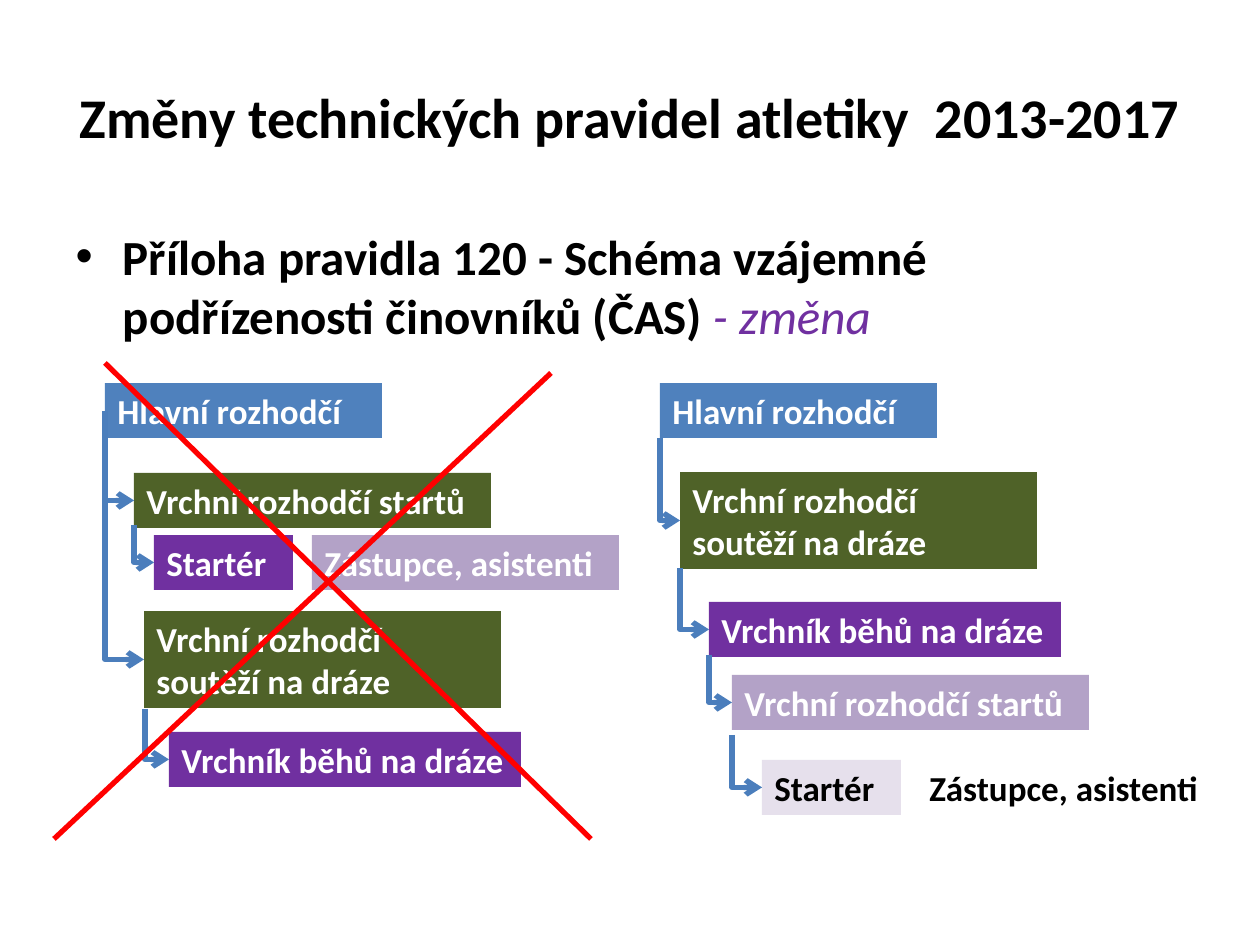
from lxml import etree
from pptx import Presentation
from pptx.dml.color import RGBColor
from pptx.enum.shapes import MSO_CONNECTOR
from pptx.enum.text import MSO_ANCHOR, MSO_AUTO_SIZE, PP_ALIGN
from pptx.oxml.ns import qn
from pptx.util import Emu, Pt

PX = 914400 // 126
STRAIGHT, ELBOW = MSO_CONNECTOR.STRAIGHT, MSO_CONNECTOR.ELBOW
MIDDLE, CENTER = MSO_ANCHOR.MIDDLE, PP_ALIGN.CENTER
GROW = MSO_AUTO_SIZE.SHAPE_TO_FIT_TEXT

BLUE, GREEN, PURPLE = "4F81BD", "4F6228", "7030A0"
LILAC, PALE, RED = "B3A2C7", "E6E0EC", "FF0000"
ARROW, WHITE, BLACK = "4B7EBC", "FFFFFF", "000000"
LOW, HIGH = 55, 97  # heights of one-line and two-line boxes

CHIEF = "Hlavní rozhodčí"
STARTS = "Vrchní rozhodčí startů"
TRACK = "Vrchní rozhodčí soutěží na dráze"
RUNS = "Vrchník běhů na dráze"
STARTER = "Startér"
HELPERS = "Zástupce, asistenti"


def px(n):
    return Emu(round(n * PX))


def rgb(code):
    return RGBColor.from_string(code)


class Board:
    def __init__(self, slide):
        self.slide = slide
        self.face = "Calibri"

    def style(self, run, size, color, bold=True, italic=False):
        font = run.font
        font.name, font.size = self.face, Pt(size)
        font.bold, font.italic = bold, italic
        font.color.rgb = rgb(color)

    def place(self, shape, x, y, w, h):
        shape.left, shape.top = px(x), px(y)
        shape.width, shape.height = px(w), px(h)

    def title(self, text, x, y, w, h):
        shape = self.slide.shapes.title
        self.place(shape, x, y, w, h)
        frame = shape.text_frame
        frame.text = text
        frame.vertical_anchor = MIDDLE
        frame.paragraphs[0].alignment = CENTER
        self.style(frame.paragraphs[0].runs[0], 32, BLACK)

    def body(self, text, note, x, y, w, h):
        shape = self.slide.placeholders[1]
        self.place(shape, x, y, w, h)
        para = shape.text_frame.paragraphs[0]
        para.text = text
        self.style(para.runs[0], 28, BLACK)
        run = para.add_run()
        run.text = note
        self.style(run, 28, PURPLE, bold=False, italic=True)

    def box(self, text, x, y, w, h=LOW, fill=None, color=WHITE):
        shape = self.slide.shapes.add_textbox(px(x), px(y), px(w), px(h))
        if fill:
            shape.fill.solid()
            shape.fill.fore_color.rgb = rgb(fill)
        frame = shape.text_frame
        frame.word_wrap = True
        frame.auto_size = GROW
        frame.text = text
        self.style(frame.paragraphs[0].runs[0], 20, color)
        return shape

    def line(self, x1, y1, x2, y2, color, kind=STRAIGHT):
        link = self.slide.shapes.add_connector(
            kind, px(x1), px(y1), px(x2), px(y2))
        link.line.color.rgb = rgb(color)
        link.line.width = Pt(3)
        etree.SubElement(link._element.spPr, qn("a:effectLst"))
        return link

    def elbow(self, x, y, box):
        """Arrow straight down from a point, then right to the box's left side."""
        wide = box.left / PX - x
        tall = (box.top + box.height / 2) / PX - y
        # A quarter turn swaps the sides around a fixed centre.
        left, top = x + (wide - tall) / 2, y + (tall - wide) / 2
        link = self.line(left, top, left + tall, top + wide, ARROW, ELBOW)
        props = link._element.spPr
        props.find(qn("a:prstGeom")).set("prst", "bentConnector2")
        turn = props.find(qn("a:xfrm"))
        turn.set("rot", "16200000")
        turn.set("flipH", "1")
        etree.SubElement(props.find(qn("a:ln")), qn("a:tailEnd"), type="arrow")


def main():
    deck = Presentation()
    deck.slide_width, deck.slide_height = px(1260), px(945)
    board = Board(deck.slides.add_slide(deck.slide_layouts[1]))
    board.title("Změny technických pravidel atletiky  2013-2017",
                63, 38, 1134, 157)
    board.body("Příloha pravidla 120 - Schéma vzájemné  podřízenosti "
               "činovníků (ČAS) ", "- změna", 63, 220, 1134, 142)

    # Old scheme, crossed out
    board.box(CHIEF, 105, 383, 277, fill=BLUE)
    starts = board.box(STARTS, 134, 473, 357, fill=GREEN)
    starter = board.box(STARTER, 154, 535, 139, fill=PURPLE)
    board.box(HELPERS, 312, 535, 307, fill=LILAC)
    track = board.box(TRACK, 144, 611, 357, HIGH, GREEN)
    runs = board.box(RUNS, 169, 732, 352, fill=PURPLE)
    for x, y, end in ((105, 411, starts), (105, 500, track),
                      (134, 525, starter), (145, 709, runs)):
        board.elbow(x, y, end)

    # New scheme
    board.box(CHIEF, 660, 383, 277, fill=BLUE)
    track = board.box(TRACK, 680, 472, 357, HIGH, GREEN)
    runs = board.box(RUNS, 709, 602, 352, fill=PURPLE)
    starts = board.box(STARTS, 732, 675, 357, fill=LILAC)
    starter = board.box(STARTER, 762, 760, 139, fill=PALE, color=BLACK)
    board.box(HELPERS, 917, 760, 307, color=BLACK)
    for x, y, end in ((660, 438, track), (680, 568, runs),
                      (709, 655, starts), (732, 735, starter)):
        board.elbow(x, y, end)

    board.line(54, 839, 551, 373, RED)
    board.line(591, 839, 105, 363, RED)
    deck.save("out.pptx")


if __name__ == "__main__":
    main()
